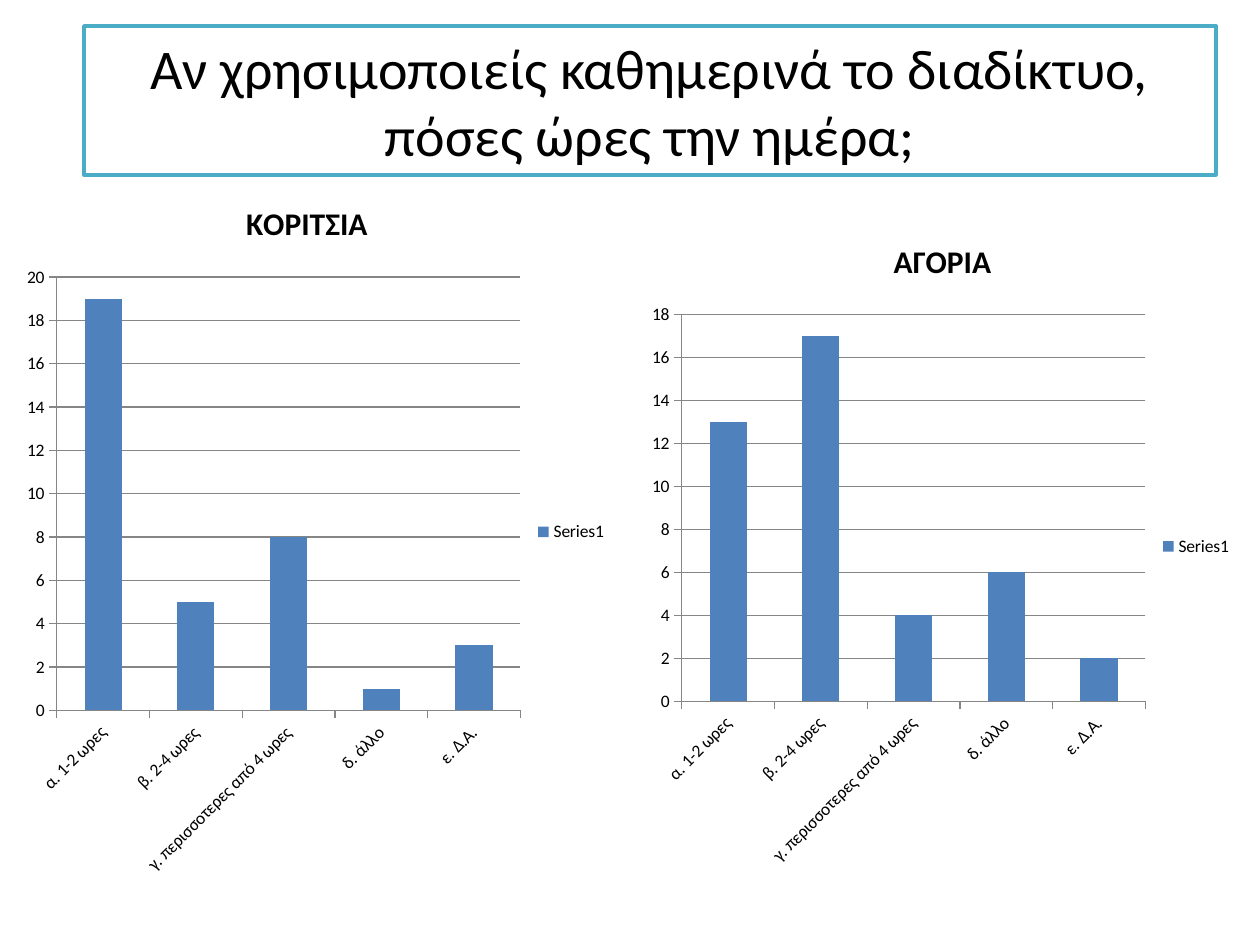
from pptx import Presentation
from pptx.chart.data import CategoryChartData as Data
from pptx.dml.color import RGBColor
from pptx.enum.chart import XL_CHART_TYPE as Kind, XL_LEGEND_POSITION as Side, XL_TICK_MARK as Tick
from pptx.enum.shapes import MSO_SHAPE as Shape
from pptx.enum.text import MSO_ANCHOR as Anchor, PP_ALIGN as Align
from pptx.util import Emu, Pt

SCALE = 914400 // 126
SIZE = 1260, 945
TITLE = "Αν χρησιμοποιείς καθημερινά το διαδίκτυο, πόσες ώρες την ημέρα;"
TITLE_BOX = 84, 26, 1132, 149
HOURS = ["α. 1-2 ωρες", "β. 2-4 ωρες", "γ. περισσοτερες από 4 ωρες", "δ. άλλο", "ε. Δ.Α."]
CHARTS = [
    ("ΚΟΡΙΤΣΙΑ\t", (15, 175, 605, 714), [19, 5, 8, 1, 3]),
    ("ΑΓΟΡΙΑ", (640, 214, 605, 665), [13, 17, 4, 6, 2]),
]
BLACK, WHITE, TEAL, BLUE, GRAY = "000000", "FFFFFF", "4BACC6", "4F81BD", "868686"
TITLE_FONT = {"name": "Calibri", "size": Pt(32), "bold": False}
LABEL_FONT = {"name": "Calibri", "size": Pt(10)}
HEAD_FONT = {"name": "Calibri", "size": Pt(18), "bold": True}


def px(*nums):
    return [Emu(n * SCALE) for n in nums]


def paint(fill, hue):
    fill.solid()
    fill.fore_color.rgb = RGBColor.from_string(hue)


def style(font, form):
    for key, val in form.items():
        setattr(font, key, val)
    paint(font.fill, BLACK)


def add_title(slide):
    box = slide.shapes.add_shape(Shape.RECTANGLE, *px(*TITLE_BOX))
    box.shadow.inherit = False
    paint(box.fill, WHITE)
    paint(box.line.fill, TEAL)
    box.line.width = Pt(2)
    frame = box.text_frame
    frame.word_wrap = True
    frame.vertical_anchor = Anchor.MIDDLE
    par = frame.paragraphs[0]
    par.alignment = Align.CENTER
    run = par.add_run()
    run.text = TITLE
    style(run.font, TITLE_FONT)


def add_bars(slide, head, box, vals):
    data = Data()
    data.categories = HOURS
    data.add_series("Series1", vals)
    chart = slide.shapes.add_chart(Kind.COLUMN_CLUSTERED, *px(*box), data).chart
    style(chart.font, LABEL_FONT)

    chart.has_title = True
    par = chart.chart_title.text_frame.paragraphs[0]
    run = par.add_run()
    run.text = head
    style(run.font, HEAD_FONT)

    chart.has_legend = True
    chart.legend.position = Side.RIGHT
    chart.legend.include_in_layout = False

    plot = chart.plots[0]
    plot.gap_width = 150
    plot.vary_by_categories = False
    paint(plot.series[0].format.fill, BLUE)

    hours, count = chart.category_axis, chart.value_axis
    for axis in (hours, count):
        axis.major_tick_mark = Tick.OUTSIDE
        paint(axis.format.line.fill, GRAY)
    count.has_major_gridlines = True
    paint(count.major_gridlines.format.line.fill, GRAY)
    count.minimum_scale, count.major_unit = 0, 2
    style(hours.tick_labels.font, LABEL_FONT)
    hours._element.txPr.bodyPr.set("rot", "-2700000")


def main():
    deck = Presentation()
    deck.slide_width, deck.slide_height = px(*SIZE)
    slide = deck.slides.add_slide(deck.slide_layouts[6])
    add_title(slide)
    for head, box, vals in CHARTS:
        add_bars(slide, head, box, vals)
    deck.save("out.pptx")


if __name__ == "__main__":
    main()
